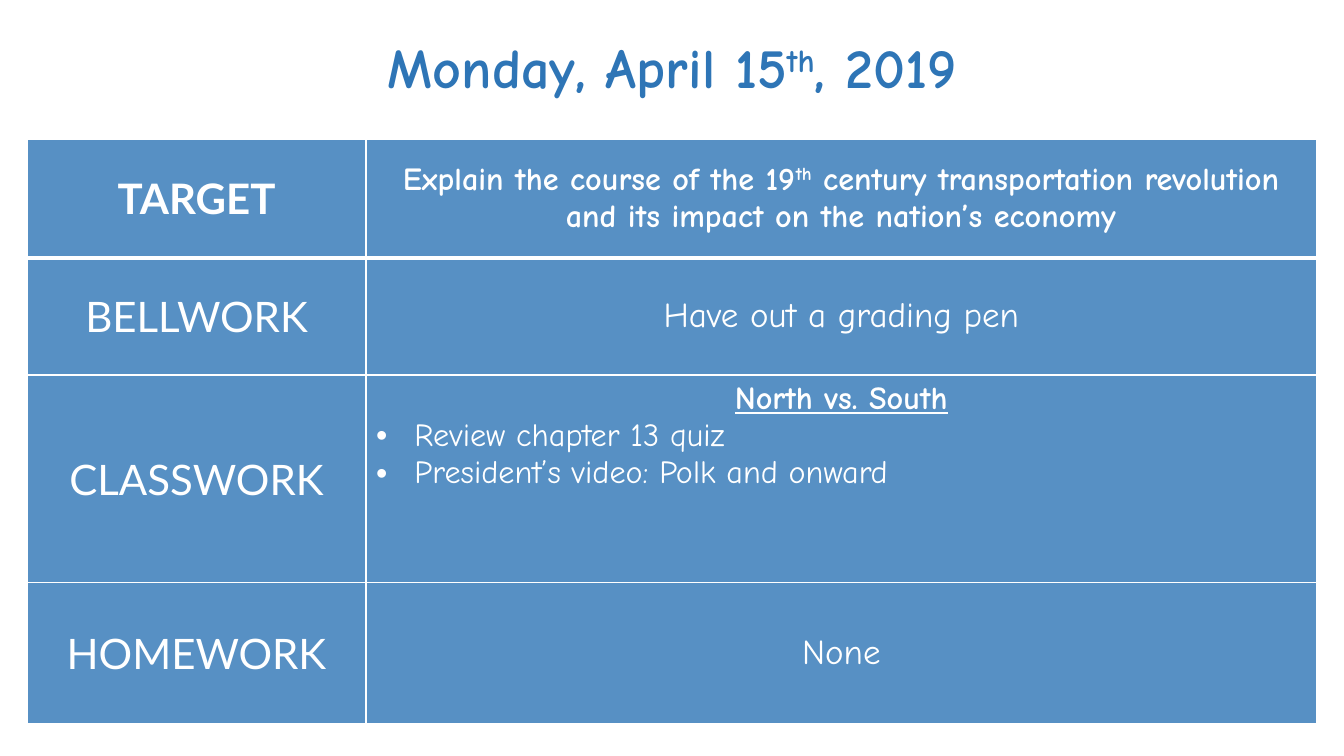
from lxml import etree
from pptx import Presentation
from pptx.dml.color import RGBColor
from pptx.enum.shapes import MSO_SHAPE
from pptx.enum.text import MSO_ANCHOR, PP_ALIGN
from pptx.oxml.ns import qn
from pptx.util import Inches, Pt

RECT = MSO_SHAPE.RECTANGLE
MIDDLE, TOP = MSO_ANCHOR.MIDDLE, MSO_ANCHOR.TOP
CENTER, LEFT = PP_ALIGN.CENTER, PP_ALIGN.LEFT

COLORS = {"blue": "2E75B6", "white": "FFFFFF"}
LABEL_FONT, BODY_FONT = "Lato", "Comic Neue"
MARGIN, WIDTH = 0.27, 12.79
TITLE_TOP, TITLE_HEIGHT = 0.16, 1
TABLE_TOP = 1.38
COLUMNS = [3.36, 9.43]
ROWS = [1.18, 1.16, 2.06, 1.4]
BULLET_INDENT = Inches(0.38)

TITLE = [("Monday, April 15", False), ("th", True), (", 2019", False)]
TARGET = [
    ("Explain the course of the 19", False),
    ("th", True),
    (" century transportation revolution and its impact on the nation’s economy", False),
]
HEADING = {"size": 23, "bold": True}
ITEM = {"size": 23, "align": LEFT, "bullet": True}
NOTE = {"size": 25}
AGENDA = [
    ("TARGET", MIDDLE, [(TARGET, HEADING)]),
    ("BELLWORK", MIDDLE, [([("Have out a grading pen", False)], NOTE)]),
    ("CLASSWORK", TOP, [
        ([("North vs. South", False)], {**HEADING, "underline": True}),
        ([("Review chapter 13 quiz", False)], ITEM),
        ([("President’s video: Polk and onward", False)], ITEM),
    ]),
    ("HOMEWORK", MIDDLE, [([("None", False)], NOTE)]),
]


def rgb(color):
    return RGBColor.from_string(COLORS[color])


def set_fill(fill, color, opacity):
    fill.solid()
    fill.fore_color.rgb = rgb(color)
    clr = fill._xPr.find(qn("a:solidFill"))[0]
    etree.SubElement(clr, qn("a:alpha")).set("val", str(opacity * 1000))


def add_bullet(p):
    pPr = p._p.get_or_add_pPr()
    pPr.set("marL", str(BULLET_INDENT))
    pPr.set("indent", str(-BULLET_INDENT))
    etree.SubElement(pPr, qn("a:buFont")).set("typeface", "Arial")
    etree.SubElement(pPr, qn("a:buChar")).set("char", "•")


def write_paragraph(p, runs, size, color="white", font=BODY_FONT, bold=False,
                    underline=False, align=CENTER, bullet=False):
    p.alignment = align
    if bullet:
        add_bullet(p)
    style = {"name": font, "size": Pt(size), "bold": bold, "underline": underline}
    for text, raised in runs:
        r = p.add_run()
        r.text = text
        for key, value in style.items():
            setattr(r.font, key, value)
        r.font.color.rgb = rgb(color)
        if raised:
            r._r.get_or_add_rPr().set("baseline", "30000")


def set_borders(cell, widths):
    tcPr = cell._tc.get_or_add_tcPr()
    for i, (side, width) in enumerate(widths.items()):
        ln = etree.Element(qn(f"a:ln{side}"), w=str(Pt(width)))
        fill = etree.SubElement(ln, qn("a:solidFill"))
        etree.SubElement(fill, qn("a:srgbClr")).set("val", COLORS["white"])
        tcPr.insert(i, ln)


def fill_cell(cell, row, anchor, paragraphs):
    cell.vertical_anchor = anchor
    set_fill(cell.fill, "blue", 80)
    set_borders(cell, {"L": 1, "R": 1, "T": 3 if row == 1 else 1,
                       "B": 3 if row == 0 else 1})
    tf = cell.text_frame
    for i, (runs, style) in enumerate(paragraphs):
        p = tf.add_paragraph() if i else tf.paragraphs[0]
        write_paragraph(p, runs, **style)


def add_agenda(s):
    frame = s.shapes.add_table(len(ROWS), len(COLUMNS), Inches(MARGIN),
                               Inches(TABLE_TOP), Inches(WIDTH), Inches(sum(ROWS)))
    table = frame.table
    for column, width in zip(table.columns, COLUMNS):
        column.width = Inches(width)
    for i, (label, anchor, paragraphs) in enumerate(AGENDA):
        table.rows[i].height = Inches(ROWS[i])
        label_style = {"size": 30, "font": LABEL_FONT, "bold": i == 0}
        fill_cell(table.cell(i, 0), i, MIDDLE, [([(label, False)], label_style)])
        fill_cell(table.cell(i, 1), i, anchor, paragraphs)


def add_title(s):
    sp = s.shapes.add_shape(RECT, Inches(MARGIN), Inches(TITLE_TOP),
                            Inches(WIDTH), Inches(TITLE_HEIGHT))
    sp.shadow.inherit = False
    sp.line.fill.background()
    set_fill(sp.fill, "white", 65)
    tf = sp.text_frame
    tf.word_wrap = True
    tf.vertical_anchor = MIDDLE
    write_paragraph(tf.paragraphs[0], TITLE, 40, color="blue", bold=True)


def main():
    prs = Presentation()
    prs.slide_width, prs.slide_height = Inches(13.33), Inches(7.5)
    s = prs.slides.add_slide(prs.slide_layouts[6])
    add_agenda(s)
    add_title(s)
    prs.save("out.pptx")


if __name__ == "__main__":
    main()
